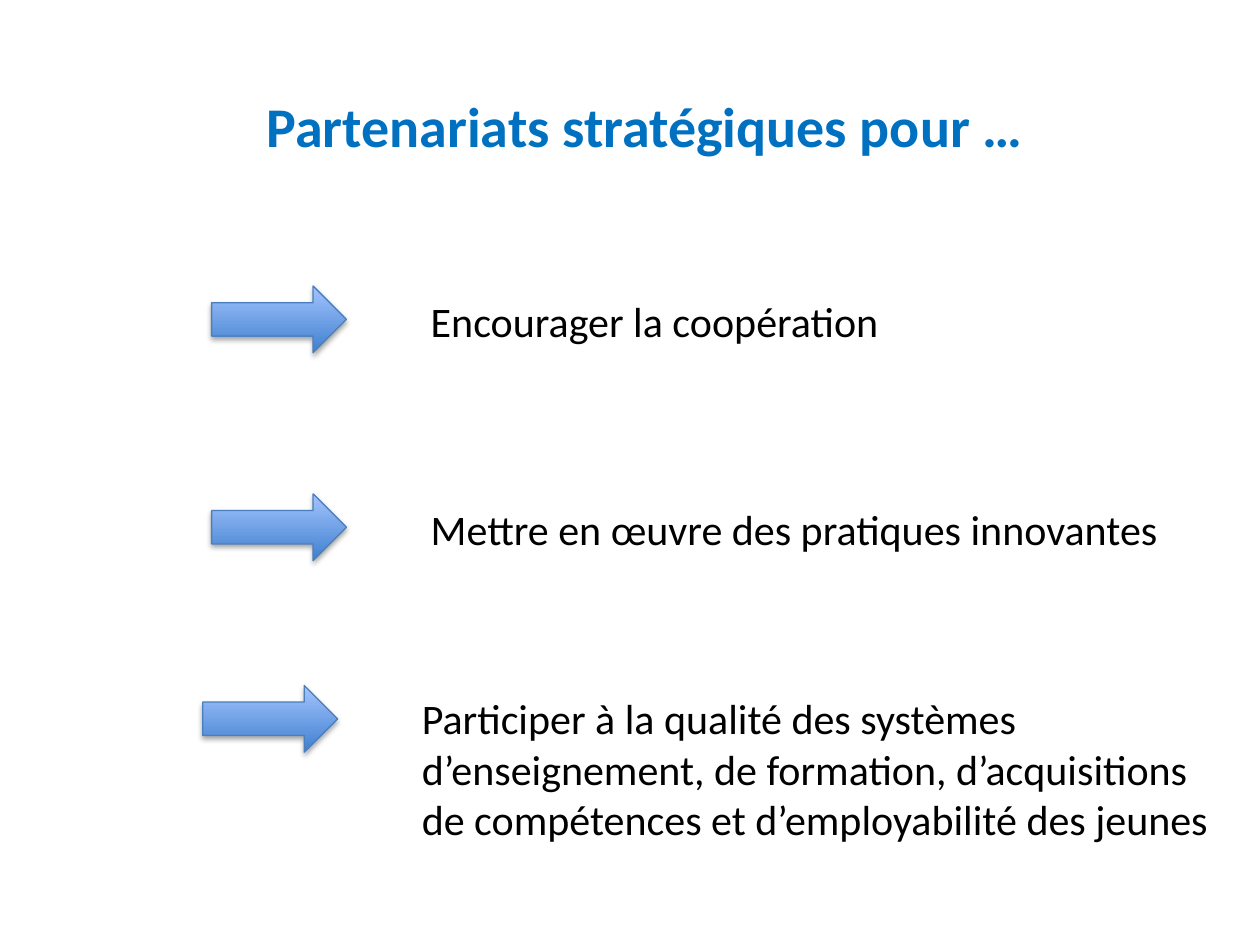
from lxml import etree
from pptx import Presentation
from pptx import util as u
from pptx.dml.color import RGBColor
from pptx.enum import shapes, text
from pptx.oxml import ns

PX = 9144
ARROW_SIZE = (107, 53)
TEXT_OFFSET = 164
GOALS = [
    ("Encourager la coopération", (168, 227), 3, (379, 50), False),
    ("Mettre en œuvre des pratiques innovantes", (168, 392), 3, (604, 50), False),
    ("Participer à la qualité des systèmes d’enseignement, de formation, "
     "d’acquisitions de compétences et d’employabilité des jeunes",
     (161, 544), 1, (654, 131), True),
]


def px(*lengths):
    return [u.Emu(length * PX) for length in lengths]


def paint(color_format, value):
    color_format.rgb = RGBColor.from_string(value)


def add_text(slide, box, content, size, color, wrap=True, bold=False,
             align=text.PP_ALIGN.LEFT):
    frame = slide.shapes.add_textbox(*px(*box)).text_frame
    frame.word_wrap = wrap
    frame.auto_size = text.MSO_AUTO_SIZE.SHAPE_TO_FIT_TEXT
    paragraph = frame.paragraphs[0]
    paragraph.text = content
    paragraph.alignment = align
    paragraph.font.name = "Calibri"
    paragraph.font.size = u.Pt(size)
    paragraph.font.bold = bold
    paint(paragraph.font.color, color)


def add_drop_shadow(shape):
    shape.shadow.inherit = False
    effects = shape._element.spPr.find(ns.qn("a:effectLst"))
    shadow = etree.SubElement(effects, ns.qn("a:outerShdw"), blurRad="40000",
                              dist="23000", dir="5400000", rotWithShape="0")
    color = etree.SubElement(shadow, ns.qn("a:srgbClr"), val="000000")
    etree.SubElement(color, ns.qn("a:alpha"), val="35000")


def add_arrow(slide, box):
    arrow = slide.shapes.add_shape(shapes.MSO_SHAPE.RIGHT_ARROW, *px(*box))
    arrow.fill.gradient()
    arrow.fill.gradient_angle = 90
    for stop, position, color in zip(arrow.fill.gradient_stops, (0, 1),
                                     ("3F80CE", "A4C4FF")):
        stop.position = position
        paint(stop.color, color)
    paint(arrow.line.color, "4B7EBC")
    arrow.line.width = u.Pt(0.75)
    add_drop_shadow(arrow)


def add_goal(slide, content, origin, drop, text_size, wrap):
    left, top = origin
    add_arrow(slide, (left, top, *ARROW_SIZE))
    add_text(slide, (left + TEXT_OFFSET, top + drop, *text_size), content,
             24, "000000", wrap)


def main():
    presentation = Presentation()
    presentation.slide_width, presentation.slide_height = px(1000, 750)
    slide = presentation.slides.add_slide(presentation.slide_layouts[6])
    add_text(slide, (24, 68, 976, 64), "Partenariats stratégiques pour …",
             32, "0070C0", bold=True, align=text.PP_ALIGN.CENTER)
    for goal in GOALS:
        add_goal(slide, *goal)
    presentation.save("out.pptx")


if __name__ == "__main__":
    main()
